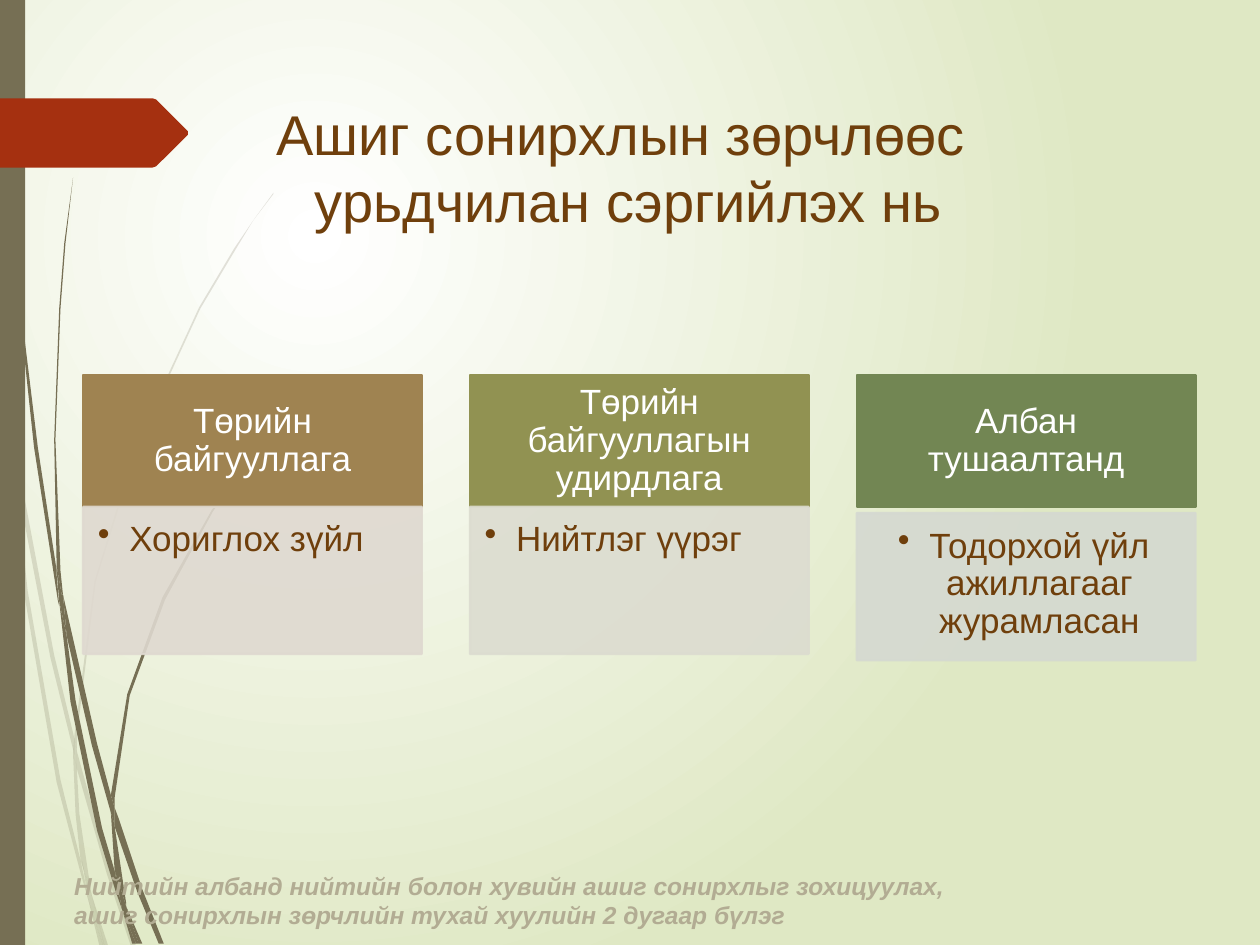
from lxml import etree
from pptx import Presentation
from pptx.dml.color import RGBColor
from pptx.enum.shapes import MSO_SHAPE as SHAPE
from pptx.enum.text import MSO_ANCHOR as ANCHOR, PP_ALIGN as ALIGN
from pptx.oxml.ns import qn
from pptx.util import Pt

COLORS = {
    "glow": "FFFFFF", "edge": "DFE8C4", "stem": "766F54", "arrow": "A53010",
    "text": "6F3F0C", "white": "FFFFFF", "source": "B2AC93",
}
GRID = Pt(0.72)

PALE_WISPS = [
    [(8, 350), (6, 322), (0, 282), (0, 299), (7, 344)],
    [(40, 522), (59, 599), (59, 586), (43, 520), (10, 345), (12, 376)],
    [(64, 607), (61, 596), (61, 610), (85, 694), (104, 751), (108, 751), (88, 692)],
    [(83, 751), (86, 751), (73, 711)],
    [(64, 683), (48, 619), (22, 469), (12, 376), (8, 350), (19, 470), (45, 621),
     (64, 693), (70, 714), (69, 707)],
    [(58, 599), (60, 646), (64, 683), (67, 692), (73, 711), (72, 706), (63, 646),
     (61, 610), (61, 608)],
    [(61, 584), (76, 462), (111, 349), (159, 245), (187, 198), (201, 175), (217, 154),
     (217, 153), (201, 175), (186, 197), (158, 244), (110, 348), (75, 461), (59, 584),
     (59, 586), (61, 596)],
    [(70, 714), (79, 751), (82, 751)],
    [(61, 608), (61, 610), (61, 596), (59, 586), (58, 599)],
    [(67, 692), (65, 683), (69, 707), (70, 714), (82, 751), (83, 751), (73, 711)],
]
DARK_WISPS = [
    [(5, 110), (14, 233), (27, 355), (46, 477), (47, 481), (45, 457), (45, 453),
     (30, 355), (15, 232), (6, 109), (4, 48), (3, 0), (2, 0), (3, 48)],
    [(73, 592), (88, 645), (88, 633), (88, 631), (77, 590), (50, 472), (53, 505)],
    [(94, 649), (91, 641), (91, 656), (109, 708), (126, 749), (130, 749), (113, 706)],
    [(91, 691), (81, 657), (60, 556), (53, 505), (47, 477), (56, 557), (77, 659),
     (92, 708), (97, 722), (96, 717)],
    [(50, 472), (48, 453), (44, 349), (48, 245), (52, 193), (58, 141), (51, 193),
     (47, 245), (43, 349), (45, 449), (49, 472)],
    [(110, 749), (113, 749), (100, 719)],
    [(47, 477), (53, 505), (50, 472), (49, 472), (45, 449), (45, 453)],
    [(91, 633), (103, 552), (131, 476), (169, 406), (191, 374), (203, 359), (216, 344),
     (215, 344), (203, 358), (191, 373), (168, 405), (129, 474), (101, 551), (88, 631),
     (91, 641)],
    [(97, 722), (105, 749), (108, 749)],
    [(88, 645), (91, 691), (96, 706), (100, 719), (100, 716), (91, 656), (90, 651)],
    [(88, 645), (90, 651), (91, 656), (91, 641), (88, 631), (88, 633)],
    [(96, 706), (91, 691), (96, 717), (97, 722), (108, 749), (110, 749), (100, 719)],
]
ARROW = [(149, 107), (124, 132), (121, 133), (0, 133), (0, 78), (121, 78), (124, 79),
         (149, 104)]

CARDS = [
    ("Төрийн байгууллага", "9F8351", "Хориглох зүйл", "DFD9D0", ALIGN.LEFT, 289.6),
    ("Төрийн байгууллагын удирдлага", "919252", "Нийтлэг үүрэг", "DCDCD0", ALIGN.LEFT, 289.6),
    ("Албан тушаалтанд", "728653", "Тодорхой үйл ажиллагааг журамласан", "D5D9D1",
     ALIGN.CENTER, 293.2),
]
CARD_LEFT, CARD_STEP, CARD_WIDTH = 47.5, 221.05, 193.6
HEAD_TOP, HEAD_HEIGHT, BODY_HEIGHT = 214.4, 75.4, 84.1


def set_attrs(target, values):
    for name, value in values.items():
        setattr(target, name, value)


def rgb(color):
    return RGBColor.from_string(color)


def paint(sp, color, opacity=100, line_width=None):
    sp.shadow.inherit = False
    sp.fill.solid()
    sp.fill.fore_color.rgb = rgb(color)
    if line_width:
        sp.line.color.rgb = rgb(color)
        sp.line.width = Pt(line_width)
    else:
        sp.line.fill.background()
    if opacity < 100:
        for clr in sp.element.spPr.iter(qn("a:srgbClr")):
            etree.SubElement(clr, qn("a:alpha"), val=str(opacity * 1000))


def add_background(s):
    fill = s.background.fill
    fill.gradient()
    for stop, name in zip(fill.gradient_stops, ("glow", "edge")):
        stop.color.rgb = rgb(COLORS[name])
    lin = next(s.element.iter(qn("a:lin")))
    circle = etree.Element(qn("a:path"), path="circle")
    etree.SubElement(circle, qn("a:fillToRect"), l="50000", t="50000", r="100000", b="100000")
    lin.getparent().replace(lin, circle)


def add_outline(s, points, color, opacity=100):
    builder = s.shapes.build_freeform(*points[0], scale=float(GRID))
    builder.add_line_segments(points[1:], close=True)
    paint(builder.convert_to_shape(), color, opacity)


def add_rect(s, box, color, opacity=100, line_width=None):
    sp = s.shapes.add_shape(SHAPE.RECTANGLE, *map(Pt, box))
    paint(sp, color, opacity, line_width)
    return sp


def write(sp, text, color, frame, para, font):
    tf = sp.text_frame
    set_attrs(tf, {"word_wrap": True, **frame})
    p = tf.paragraphs[0]
    p.text = text
    set_attrs(p, para)
    for r in p.runs:
        set_attrs(r.font, {"name": "Arial", **font})
        r.font.color.rgb = rgb(color)
    return p


def margins(left, top, right, bottom):
    return {"margin_left": Pt(left), "margin_top": Pt(top),
            "margin_right": Pt(right), "margin_bottom": Pt(bottom)}


def add_bullet(p):
    pPr = p._p.get_or_add_pPr()
    pPr.set("marL", str(Pt(18)))
    pPr.set("indent", str(Pt(-18)))
    etree.SubElement(pPr, qn("a:buChar"), char="•")


def add_card(s, left, head, head_color, body, body_color, body_align, body_top):
    font = {"size": Pt(20)}
    sp = add_rect(s, (left, HEAD_TOP, CARD_WIDTH, HEAD_HEIGHT), head_color, line_width=1.25)
    write(sp, head, COLORS["white"],
          {"vertical_anchor": ANCHOR.MIDDLE, **margins(11.2, 6.4, 11.2, 6.4)},
          {"alignment": ALIGN.CENTER, "line_spacing": 0.9}, font)
    sp = add_rect(s, (left, body_top, CARD_WIDTH, BODY_HEIGHT), body_color, 90, 1.25)
    p = write(sp, body, COLORS["text"],
              {"vertical_anchor": ANCHOR.TOP, **margins(8.4, 8.4, 11.2, 12.6)},
              {"alignment": body_align, "line_spacing": 0.9, "level": 1}, font)
    add_bullet(p)


def add_text(s, box, text, color, anchor, align, font):
    sp = s.shapes.add_textbox(*map(Pt, box))
    write(sp, text, color, {"vertical_anchor": anchor}, {"alignment": align}, font)


def main():
    prs = Presentation()
    set_attrs(prs, {"slide_width": Pt(720), "slide_height": Pt(540)})
    s = prs.slides.add_slide(prs.slide_layouts[6])
    add_background(s)
    for wisps, opacity in ((PALE_WISPS, 20), (DARK_WISPS, 100)):
        for points in wisps:
            add_outline(s, points, COLORS["stem"], opacity)
    add_rect(s, (0, 0, 14.4, 540), COLORS["stem"])
    add_outline(s, ARROW, COLORS["arrow"])
    add_text(s, (35.3, 53.3, 648, 104.4), "Ашиг сонирхлын зөрчлөөс \vурьдчилан сэргийлэх нь",
             COLORS["text"], ANCHOR.TOP, ALIGN.CENTER, {"size": Pt(32)})
    for i, card in enumerate(CARDS):
        add_card(s, CARD_LEFT + i * CARD_STEP, *card)
    add_text(s, (35.3, 426.2, 513.4, 108.7),
             "Нийтийн албанд нийтийн болон хувийн ашиг сонирхлыг зохицуулах, "
             "ашиг сонирхлын зөрчлийн тухай хуулийн 2 дугаар бүлэг",
             COLORS["source"], ANCHOR.BOTTOM, ALIGN.LEFT,
             {"size": Pt(14), "bold": True, "italic": True})
    prs.save("out.pptx")


if __name__ == "__main__":
    main()
